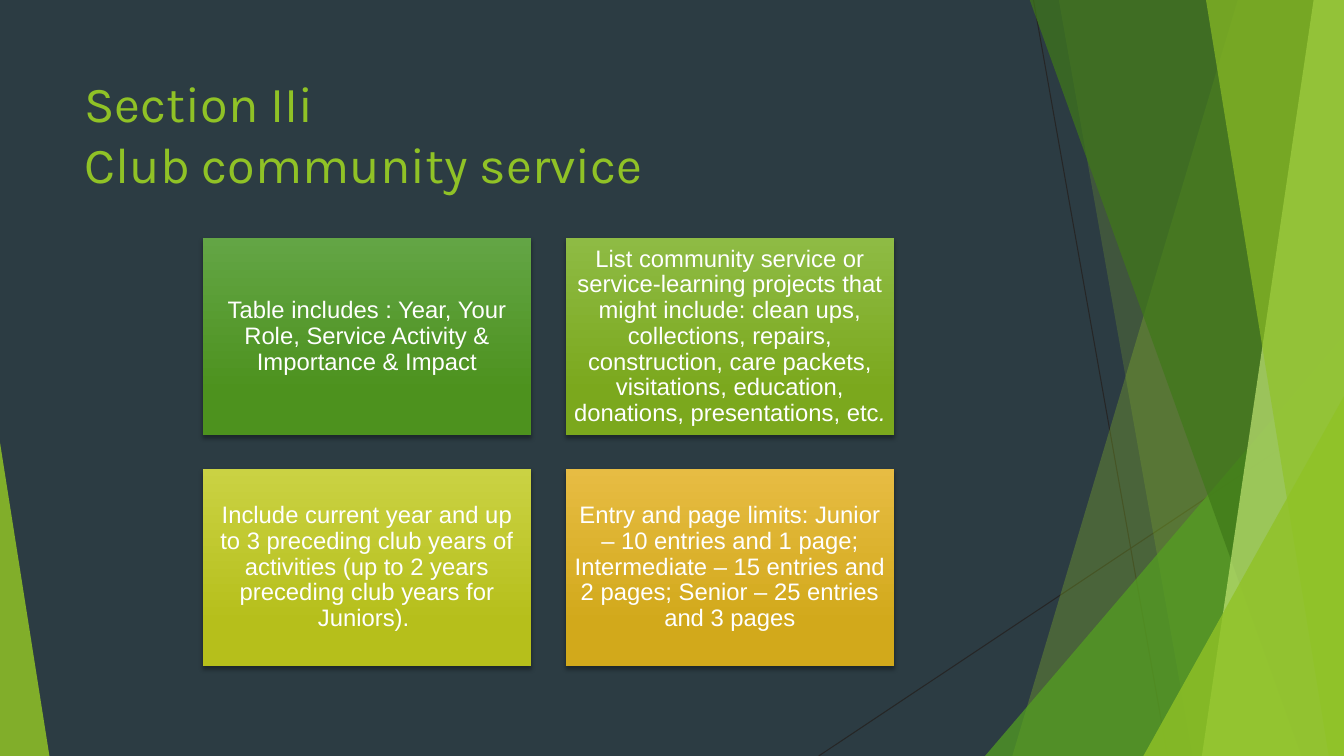
from lxml import etree
from pptx import Presentation
from pptx.dml.color import RGBColor
from pptx.enum.shapes import MSO_CONNECTOR, MSO_SHAPE
from pptx.enum.text import MSO_ANCHOR, PP_ALIGN
from pptx.oxml.ns import qn
from pptx.util import Inches, Pt

WIDTH, HEIGHT = 13.33, 7.5
LIME = "90C226"


def rgb(value):
    return RGBColor.from_string(value)


class SlideBuilder:
    title_font, body_font = "Karla", "Arial"
    title_size, body_size = 36, 17
    text_color, line_color = "FFFFFF", "262626"

    def __init__(self, slide):
        self.slide = slide
        self.shapes = slide.shapes

    def background(self, color):
        fill = self.slide.background.fill
        fill.solid()
        fill.fore_color.rgb = rgb(color)

    def line(self, x1, y1, x2, y2):
        line = self.shapes.add_connector(
            MSO_CONNECTOR.STRAIGHT, Inches(x1), Inches(y1), Inches(x2), Inches(y2))
        line.line.color.rgb = rgb(self.line_color)
        line.line.width = Pt(0.75)
        etree.SubElement(line._element.spPr, qn("a:effectLst"))

    def tint(self, sp, color, opacity):
        """Give a shape a translucent fill, no outline and no shadow."""
        sp.fill.solid()
        sp.fill.fore_color.rgb = rgb(color)
        clr = sp._element.spPr.find(qn("a:solidFill"))[0]
        etree.SubElement(clr, qn("a:alpha"), val=str(opacity * 1000))
        sp.line.fill.background()
        sp.shadow.inherit = False

    def band(self, top_x, bottom_x, color, opacity):
        """Fill from a slanted left edge to the right side of the slide."""
        top = -0.01
        points = [(WIDTH, top), (WIDTH, HEIGHT), (bottom_x, HEIGHT)]
        builder = self.shapes.build_freeform(Inches(top_x), Inches(top))
        builder.add_line_segments([(Inches(x), Inches(y)) for x, y in points])
        self.tint(builder.convert_to_shape(), color, opacity)

    def triangle(self, x, y, w, h, apex, color, opacity):
        sp = self.shapes.add_shape(
            MSO_SHAPE.ISOSCELES_TRIANGLE, Inches(x), Inches(y), Inches(w), Inches(h))
        sp.adjustments[0] = apex
        self.tint(sp, color, opacity)

    def run(self, p, text, font, size, color, italic=None):
        r = p.add_run()
        r.text = text
        r.font.name = font
        r.font.size = Pt(size)
        r.font.color.rgb = rgb(color)
        r.font.italic = italic

    def title(self, x, y, w, h, lines):
        tf = self.shapes.add_textbox(
            Inches(x), Inches(y), Inches(w), Inches(h)).text_frame
        tf.word_wrap = True
        p = tf.paragraphs[0]
        for i, text in enumerate(lines):
            if i:
                p.add_line_break()
            self.run(p, text, self.title_font, self.title_size, LIME)

    def card(self, x, y, w, h, top_color, bottom_color, runs):
        sp = self.shapes.add_shape(
            MSO_SHAPE.RECTANGLE, Inches(x), Inches(y), Inches(w), Inches(h))
        sp.fill.gradient()
        sp.fill.gradient_angle = 270
        stops = zip(sp.fill.gradient_stops, (0, 0.78), (top_color, bottom_color))
        for stop, position, color in stops:
            stop.position = position
            stop.color.rgb = rgb(color)
        sp.line.fill.background()
        self.drop_shadow(sp)
        tf = sp.text_frame
        tf.word_wrap = True
        tf.vertical_anchor = MSO_ANCHOR.MIDDLE
        tf.margin_left = tf.margin_right = Inches(0.07)
        tf.margin_top = tf.margin_bottom = Inches(0.07)
        p = tf.paragraphs[0]
        p.alignment = PP_ALIGN.CENTER
        p.line_spacing = 0.9
        for text, italic in runs:
            self.run(p, text, self.body_font, self.body_size, self.text_color, italic)

    def drop_shadow(self, sp):
        sp.shadow.inherit = False
        effects = sp._element.spPr.find(qn("a:effectLst"))
        shadow = etree.SubElement(
            effects, qn("a:outerShdw"), blurRad=str(Pt(3)), dist=str(Pt(2)),
            dir="5400000", algn="ctr", rotWithShape="0")
        clr = etree.SubElement(shadow, qn("a:srgbClr"), val="000000")
        etree.SubElement(clr, qn("a:alpha"), val="35000")


CARDS = [
    ("63A545", "4D921E", [
        ("Table includes : Year, Your Role, Service Activity & Importance & Impact", None)]),
    ("8EBB44", "7BA81D", [
        ("List community service or service-learning projects that might include: "
         "clean ups, collections, repairs, construction, care packets, visitations, "
         "education, donations, presentations, etc", None),
        (". ", True)]),
    ("CAD243", "B6BF1B", [
        ("Include current year and up to 3 preceding club years of activities "
         "(up to 2 years preceding club years for Juniors). ", None)]),
    ("E7BC43", "D2A91B", [
        ("Entry and page limits: Junior – 10 entries and 1 page; Intermediate – "
         "15 entries and 2 pages; Senior – 25 entries and 3 pages", None)]),
]


def main():
    prs = Presentation()
    prs.slide_width, prs.slide_height = Inches(WIDTH), Inches(HEIGHT)
    page = SlideBuilder(prs.slides.add_slide(prs.slide_layouts[6]))

    page.background("2C3C43")
    page.line(10.25, 0, 11.58, HEIGHT)
    page.line(WIDTH, 4.03, 8.12, HEIGHT)
    page.band(12.28, 10.04, LIME, 30)
    page.band(10.5, 11.83, LIME, 20)
    page.triangle(9.77, 3.33, 3.56, 4.17, 1, "54A021", 72)
    page.band(10.21, 12.91, "3F7819", 70)
    page.band(13.03, 11.92, "C0E474", 70)
    page.band(11.96, 13.18, LIME, 65)
    page.triangle(11.34, 3.93, 1.99, 3.57, 1, LIME, 80)
    page.triangle(0, 4.39, 0.49, 3.11, 0, LIME, 85)

    page.title(0.74, 0.67, 9.4, 1.44, ["Section IIi", "Club community service"])

    card_w, card_h = 3.26, 1.96
    for i, card in enumerate(CARDS):
        row, col = divmod(i, 2)
        page.card(2.01 + col * 3.6, 2.36 + row * 2.29, card_w, card_h, *card)

    prs.save("out.pptx")


if __name__ == "__main__":
    main()
